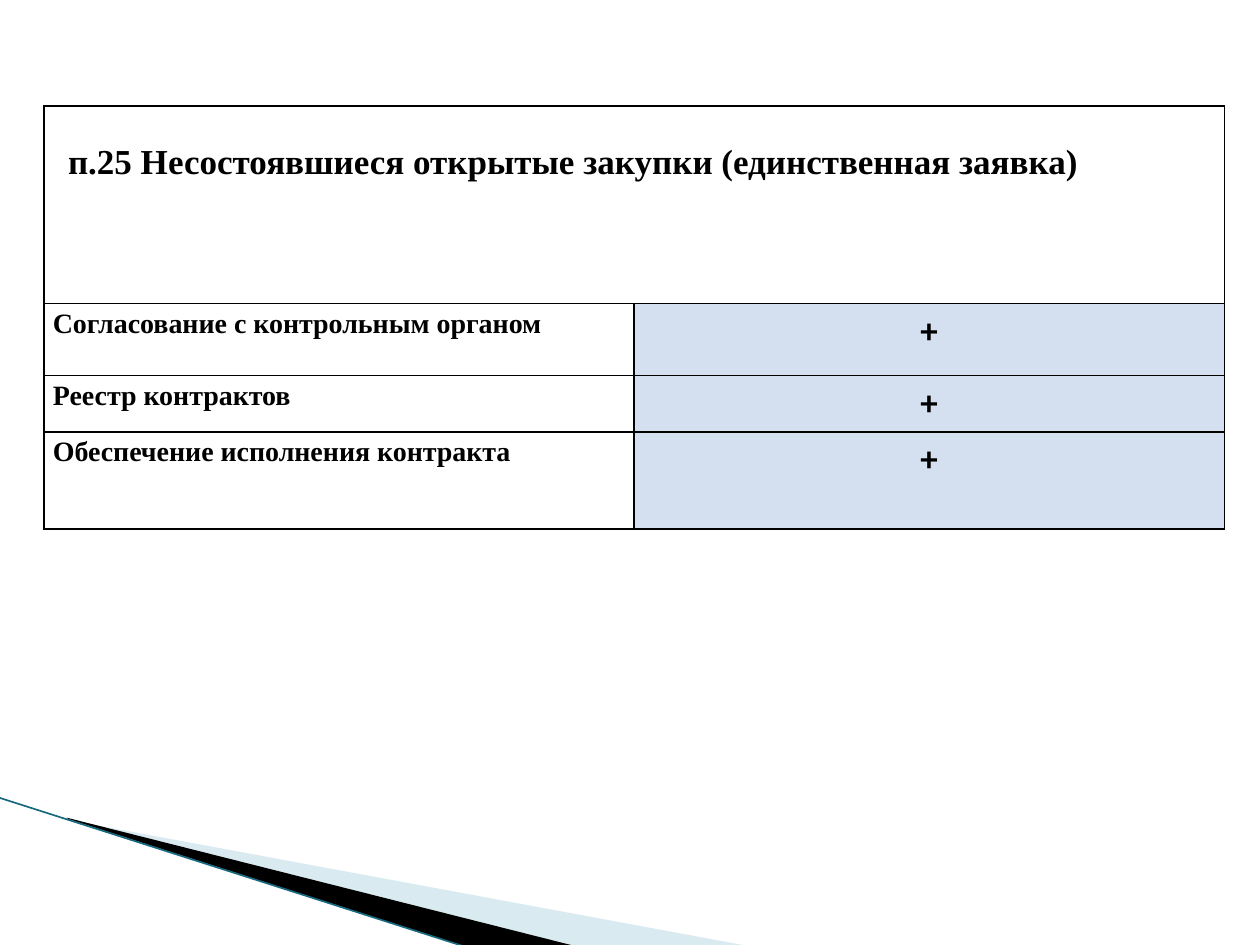
from lxml import etree
from pptx import Presentation
from pptx.dml.color import RGBColor
from pptx.enum.shapes import MSO_CONNECTOR
from pptx.enum.text import PP_ALIGN
from pptx.oxml import parse_xml
from pptx.oxml.ns import nsdecls, qn
from pptx.util import Inches, Pt

COLORS = {"black": "000000", "white": "FFFFFF", "cell": "D4DFEF",
          "pale": "A0CBDC", "teal": "17697F"}
HUE = {name: RGBColor.from_string(code) for name, code in COLORS.items()}


def add_wedge(points, color):
    start, *rest = [(Inches(x), Inches(y)) for x, y in points]
    pen = slide.shapes.build_freeform(*start)
    pen.add_line_segments(rest, close=True)
    wedge = pen.convert_to_shape()
    wedge.shadow.inherit = False
    wedge.fill.solid()
    wedge.fill.fore_color.rgb = HUE[color]
    wedge.line.fill.background()
    return wedge


def fill_cell(cell, text, size, font, fill, align=PP_ALIGN.LEFT):
    """Write bold text in a cell, fill it and border it in black."""
    cell.margin_left = cell.margin_right = Inches(0.07)
    cell.margin_top = cell.margin_bottom = 0
    cell.text_frame.text = text
    para = cell.text_frame.paragraphs[0]
    para.alignment = align
    para.line_spacing = 1.15
    for run in para.runs:
        run.font.size = Pt(size)
        run.font.name = font
        run.font.bold = True
        run.font.color.rgb = HUE["black"]
    props = cell._tc.get_or_add_tcPr()
    for side in ("lnL", "lnR", "lnT", "lnB"):
        props.append(parse_xml(
            f'<a:{side} {nsdecls("a")} w="12700"><a:solidFill>'
            f'<a:srgbClr val="{COLORS["black"]}"/></a:solidFill></a:{side}>'))
    cell.fill.solid()
    cell.fill.fore_color.rgb = HUE[fill]


deck = Presentation()
deck.slide_width, deck.slide_height = Inches(10), Inches(7.5)
slide = deck.slides.add_slide(deck.slide_layouts[6])

# Corner decoration
pale = add_wedge([(0.55, 6.51), (5.95, 7.51), (4.56, 7.51), (0.55, 6.5)], "pale")
tint = pale.fill._xPr.find(qn("a:solidFill"))[0]
etree.SubElement(tint, qn("a:alpha"), val="40000")
add_wedge([(0.53, 6.49), (4.57, 7.51), (3.72, 7.52), (0.54, 6.5)], "black")
edge = slide.shapes.add_connector(MSO_CONNECTOR.STRAIGHT, Inches(-0.01),
                                  Inches(6.33), Inches(3.71), Inches(7.52))
edge.line.color.rgb = HUE["teal"]
edge.line.width = Pt(0.95)
etree.SubElement(edge._element.spPr, qn("a:effectLst"))

# Table
rows = ["Согласование с контрольным органом", "Реестр контрактов",
        "Обеспечение исполнения контракта"]
table = slide.shapes.add_table(4, 2, Inches(0.35), Inches(0.84),
                               Inches(9.37), Inches(3.36)).table
table.first_row = table.horz_banding = False
for col, width in zip(table.columns, (4.68, 4.69)):
    col.width = Inches(width)
for row, height in zip(table.rows, (1.57, 0.57, 0.45, 0.77)):
    row.height = Inches(height)

head = table.cell(0, 0)
head.merge(table.cell(0, 1))
fill_cell(head, "п.25 Несостоявшиеся открытые закупки (единственная заявка)",
          20, "Times New Roman", "white")
fill_cell(table.cell(0, 1), "", 20, "Times New Roman", "white")
head.margin_left = Inches(0.19)
head.margin_top = Inches(0.25)
for i, label in enumerate(rows, 1):
    fill_cell(table.cell(i, 0), label, 16, "Times New Roman", "white")
    fill_cell(table.cell(i, 1), "+", 20, "Calibri", "cell", PP_ALIGN.CENTER)

deck.save("out.pptx")
